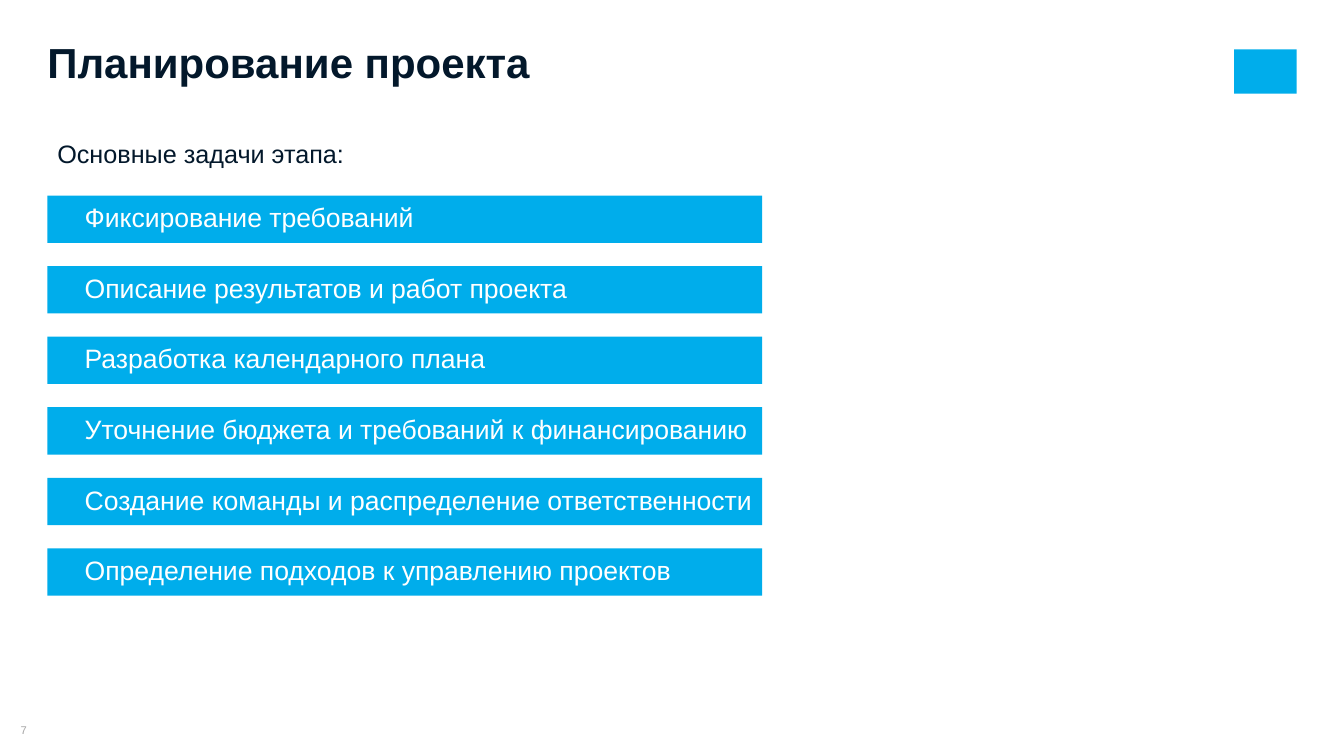
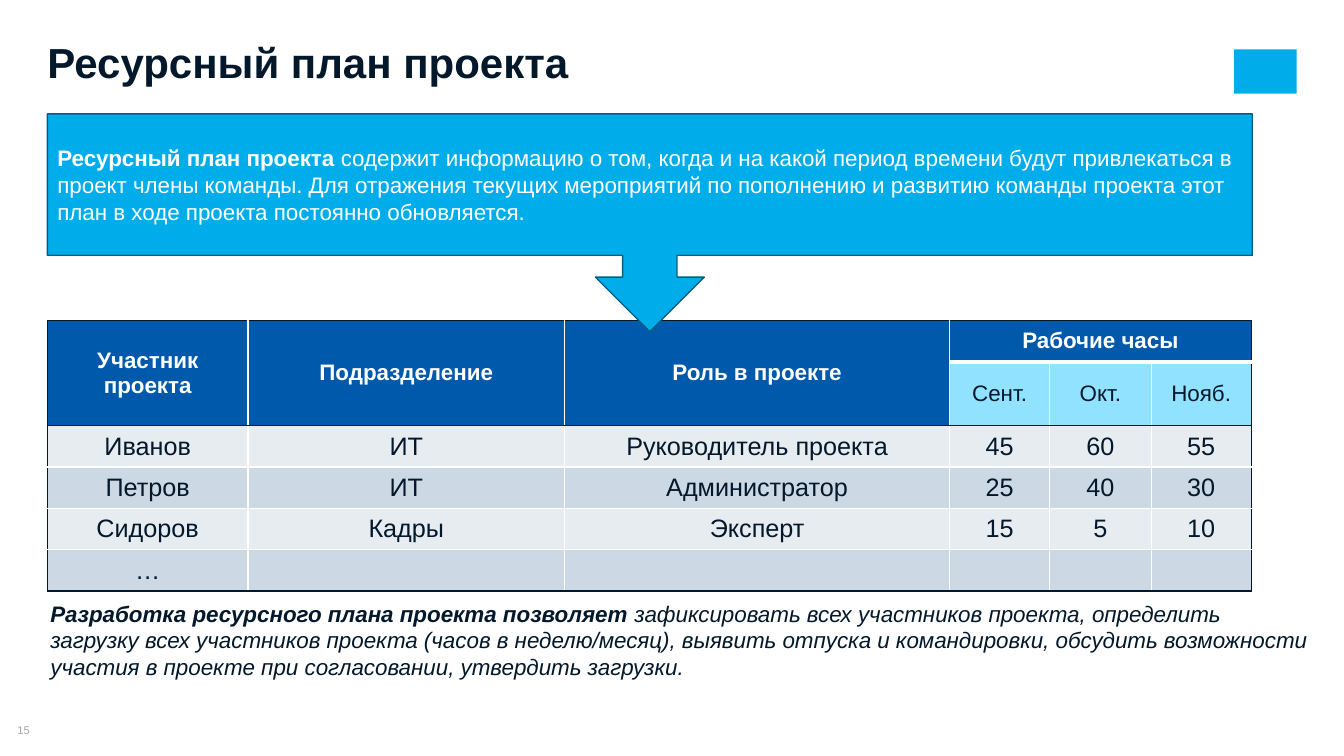
import lxml.etree
import pptx
import pptx.dml.color
import pptx.enum.shapes
import pptx.enum.text
import pptx.oxml.ns
import pptx.util

Inches = pptx.util.Inches
Pt = pptx.util.Pt
RGBColor = pptx.dml.color.RGBColor
Shape = pptx.enum.shapes.MSO_SHAPE
Align = pptx.enum.text.PP_ALIGN
Anchor = pptx.enum.text.MSO_ANCHOR
qn = pptx.oxml.ns.qn

NAVY = RGBColor(0x03, 0x18, 0x2B)
SKY = RGBColor(0x00, 0xAD, 0xEB)
DEEP_SKY = RGBColor(0x01, 0x5E, 0x80)
PALE_SKY = RGBColor(0x91, 0xE2, 0xFF)
BLUE = RGBColor(0x00, 0x59, 0xAA)
LIGHT_BAND = RGBColor(0xE7, 0xEC, 0xF1)
DARK_BAND = RGBColor(0xCC, 0xD8, 0xE3)
GREY = RGBColor(0xA6, 0xA6, 0xA6)
WHITE = RGBColor(0xFF, 0xFF, 0xFF)

FONT = "Arial"
LEFT = 0.47

TASKS = [
    "Фиксирование требований",
    "Описание результатов и работ проекта",
    "Разработка календарного плана",
    "Уточнение бюджета и требований к финансированию",
    "Создание команды и распределение ответственности",
    "Определение подходов к управлению проектов",
]
TASK_TOP, TASK_STEP = 1.94, 0.7

PLAN_COLUMNS = [1.99, 3.14, 3.82, 0.99, 1.01, 0.99]
PLAN_ROW_HEIGHT = 0.41
PLAN_ROWS = [
    ["Участник проекта", "Подразделение", "Роль в проекте", "Рабочие часы", "", ""],
    ["", "", "", "Сент.", "Окт.", "Нояб."],
    ["Иванов", "ИТ", "Руководитель проекта", "45", "60", "55"],
    ["Петров", "ИТ", "Администратор", "25", "40", "30"],
    ["Сидоров", "Кадры", "Эксперт", "15", "5", "10"],
    ["…", "", "", "", "", ""],
]
HEADER_ROWS = 2
FIRST_MONTH = 3


class Deck:
    def __init__(self):
        self.presentation = pptx.Presentation()
        self.presentation.slide_width = Inches(13.33)
        self.presentation.slide_height = Inches(7.5)
        self.slide = None

    def start_slide(self, title, number):
        layout = self.presentation.slide_layouts.get_by_name("Title Only")
        self.slide = self.presentation.slides.add_slide(layout)
        self.shape(Shape.RECTANGLE, 12.24, 0.49, 0.62, 0.44, SKY)
        self.text(number, 0, 7.18, LEFT, 0.13, 8, GREY, insets=(0, 0, 0, 0),
                  align=Align.CENTER, anchor=Anchor.MIDDLE)
        heading = self.slide.shapes.title
        heading.left, heading.top = Inches(LEFT), Inches(0.46)
        heading.width, heading.height = Inches(10.51), Inches(0.41)
        self.set_text(heading.text_frame, title, 30, NAVY, insets=(0, 0, 0, 0), bold=True)
        heading.text_frame.paragraphs[0].line_spacing = 0.8

    def style_run(self, run, size, color, bold=False, italic=False):
        font = run.font
        font.name, font.size, font.color.rgb = FONT, Pt(size), color
        font.bold, font.italic = bold, italic

    def set_text(self, frame, text, size, color, lead="", insets=(0.1, 0.05, 0.1, 0.05),
                 align=Align.LEFT, anchor=Anchor.TOP, wrap=True, bold=False, italic=False):
        """Fill a text frame with an optional bold lead followed by the text."""
        frame.word_wrap, frame.vertical_anchor = wrap, anchor
        (frame.margin_left, frame.margin_top,
         frame.margin_right, frame.margin_bottom) = map(Inches, insets)
        frame.text = lead or text
        paragraph = frame.paragraphs[0]
        paragraph.alignment = align
        self.style_run(paragraph.runs[0], size, color, bold or bool(lead), italic)
        if lead:
            rest = paragraph.add_run()
            rest.text = text
            self.style_run(rest, size, color, bold, italic)

    def text(self, text, left, top, width, height, size, color, **style):
        box = self.slide.shapes.add_textbox(
            Inches(left), Inches(top), Inches(width), Inches(height))
        self.set_text(box.text_frame, text, size, color, **style)

    def shape(self, kind, left, top, width, height, fill, line=None):
        shape = self.slide.shapes.add_shape(
            kind, Inches(left), Inches(top), Inches(width), Inches(height))
        shape.shadow.inherit = False
        shape.fill.solid()
        shape.fill.fore_color.rgb = fill
        if line is None:
            shape.line.fill.background()
        else:
            shape.line.color.rgb = line
            shape.line.width = Pt(1)
        return shape

    def task_bar(self, text, top):
        bar = self.shape(Shape.RECTANGLE, LEFT, top, 7.09, 0.47, SKY)
        self.set_text(bar.text_frame, text, 19, WHITE, insets=(0.37, 0.05, 0.05, 0.05),
                      anchor=Anchor.MIDDLE)
        bar.text_frame.paragraphs[0].line_spacing = 0.9

    def callout(self, lead, text, top, width, height):
        callout = self.shape(Shape.DOWN_ARROW_CALLOUT, LEFT, top, width, height,
                             SKY, DEEP_SKY)
        self.set_text(callout.text_frame, text, 16, WHITE, lead=lead, anchor=Anchor.MIDDLE)

    def plan_table(self, top):
        row_count, column_count = len(PLAN_ROWS), len(PLAN_COLUMNS)
        table = self.slide.shapes.add_table(
            row_count, column_count, Inches(LEFT), Inches(top),
            Inches(sum(PLAN_COLUMNS)), Inches(PLAN_ROW_HEIGHT * row_count)).table
        table.first_row = table.horz_banding = False
        for column, width in zip(table.columns, PLAN_COLUMNS):
            column.width = Inches(width)
        for row in table.rows:
            row.height = Inches(PLAN_ROW_HEIGHT)
        for column in range(FIRST_MONTH):
            table.cell(0, column).merge(table.cell(HEADER_ROWS - 1, column))
        table.cell(0, FIRST_MONTH).merge(table.cell(0, column_count - 1))
        for row, texts in enumerate(PLAN_ROWS):
            for column, text in enumerate(texts):
                self.plan_cell(table.cell(row, column), text, row, column)

    def plan_cell(self, cell, text, row, column):
        is_month = row == 1 and column >= FIRST_MONTH
        is_heading = row < HEADER_ROWS and not is_month
        if is_heading:
            fill = BLUE
        elif is_month:
            fill = PALE_SKY
        else:
            fill = DARK_BAND if row % 2 else LIGHT_BAND
        cell.fill.solid()
        cell.fill.fore_color.rgb = fill
        cell.vertical_anchor = Anchor.MIDDLE
        if text:
            cell.text = text
            paragraph = cell.text_frame.paragraphs[0]
            paragraph.alignment = Align.CENTER
            self.style_run(paragraph.runs[0], 16 if row < HEADER_ROWS else 18,
                           WHITE if is_heading else NAVY, bold=is_heading)

        last_row, last_column = row, column
        if cell.is_merge_origin:
            last_row += cell.span_height - 1
            last_column += cell.span_width - 1
        dark_sides = {
            "L": column == 0,
            "R": last_column == len(PLAN_COLUMNS) - 1,
            "T": row in (0, HEADER_ROWS),
            "B": last_row in (HEADER_ROWS - 1, len(PLAN_ROWS) - 1),
        }
        above_months = row == 0 and column >= FIRST_MONTH
        for position, (side, dark) in enumerate(dark_sides.items()):
            width = 3 if above_months and side == "B" else 1
            self.cell_border(cell, side, position, NAVY if dark else WHITE, width)

    def cell_border(self, cell, side, position, color, width):
        """Insert one border line; the sides must precede the cell fill in order."""
        line = lxml.etree.Element(qn(f"a:ln{side}"), w=str(Pt(width)))
        fill = lxml.etree.SubElement(line, qn("a:solidFill"))
        lxml.etree.SubElement(fill, qn("a:srgbClr"), val=str(color))
        cell._tc.get_or_add_tcPr().insert(position, line)


def add_planning_slide(deck):
    deck.start_slide("Планирование проекта", "7")
    deck.text("Основные задачи этапа:", LEFT, 1.32, 3.09, 0.4, 18, NAVY, wrap=False)
    for index, task in enumerate(TASKS):
        deck.task_bar(task, TASK_TOP + index * TASK_STEP)


def add_resource_slide(deck):
    deck.start_slide("Ресурсный план проекта", "15")
    deck.plan_table(3.18)
    deck.callout(
        "Ресурсный план проекта ",
        "содержит информацию о том, когда и на какой период времени будут "
        "привлекаться в проект члены команды. Для отражения текущих мероприятий "
        "по пополнению и развитию команды проекта этот план в ходе проекта "
        "постоянно обновляется.",
        1.13, 11.95, 2.16)
    deck.text(
        "зафиксировать всех участников проекта, определить загрузку всех участников "
        "проекта (часов в неделю/месяц), выявить отпуска и командировки, обсудить "
        "возможности участия в проекте при согласовании, утвердить загрузки.",
        0.35, 5.8, 12.84, 1.24, 16, NAVY,
        lead="Разработка ресурсного плана проекта позволяет ",
        insets=(0.15, 0.15, 0.15, 0.15), italic=True)


def main():
    deck = Deck()
    add_planning_slide(deck)
    add_resource_slide(deck)
    deck.presentation.save("out.pptx")


if __name__ == "__main__":
    main()
